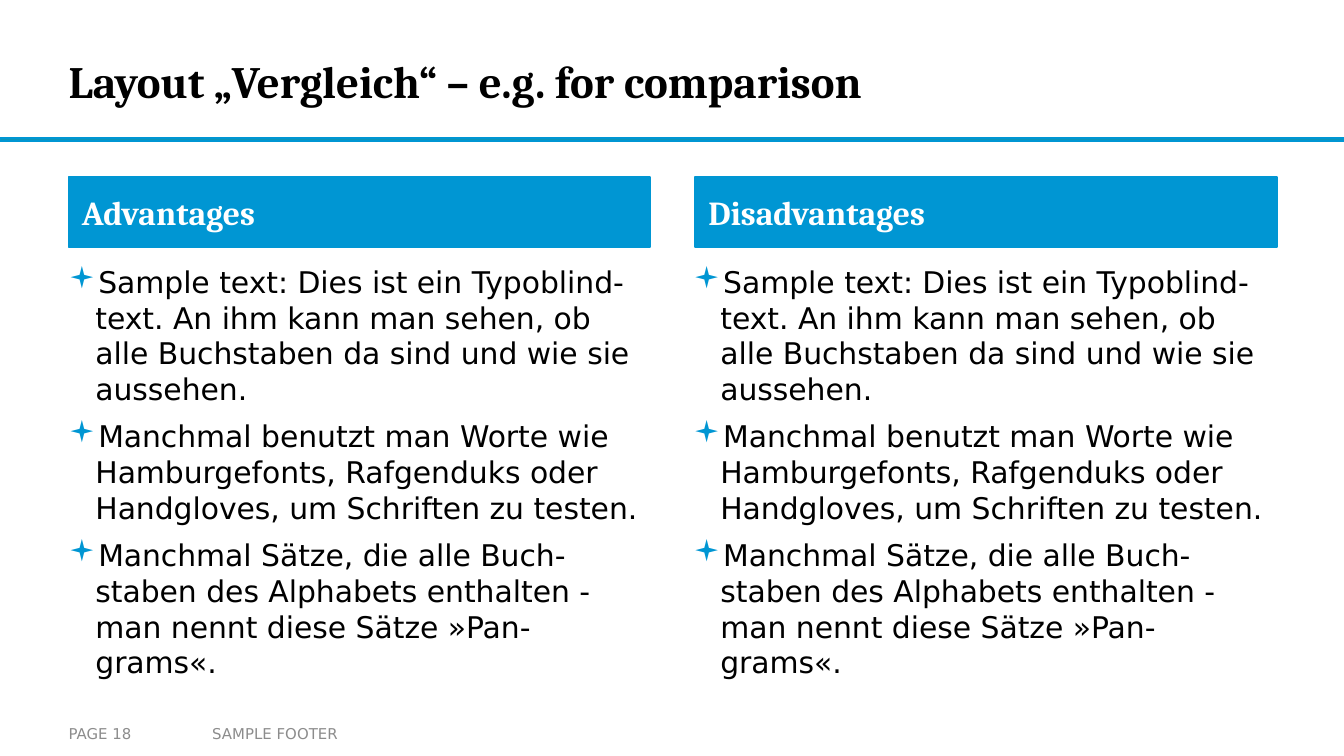
from lxml import etree
from pptx import Presentation
from pptx.dml.color import RGBColor
from pptx.enum.shapes import MSO_SHAPE
from pptx.enum.text import MSO_ANCHOR, MSO_AUTO_SIZE, PP_ALIGN
from pptx.oxml.ns import qn
from pptx.util import Inches, Pt

RECTANGLE = MSO_SHAPE.RECTANGLE
TOP, MIDDLE = MSO_ANCHOR.TOP, MSO_ANCHOR.MIDDLE
NO_AUTOFIT = MSO_AUTO_SIZE.NONE
LEFT = PP_ALIGN.LEFT

COLORS = {"accent": "0096D3", "rule": "0C94B7", "text": "000000",
          "inverse": "FFFFFF", "footer": "8C8C8C"}
HEADING_FONT, BODY_FONT, BULLET_FONT = "Cambria", "DejaVu Sans", "Wingdings"

MARGIN = 0.51
COLUMN_WIDTH = 4.33
HEADING_STEP, BODY_STEP = 4.66, 4.65
HEADING_TOP, HEADING_HEIGHT = 1.32, 0.52
BODY_TOP, BODY_HEIGHT = 1.91, 3.22
FOOTER_TOP, FOOTER_HEIGHT = 5.33, 0.25

HEADINGS = ["Advantages", "Disadvantages"]
POINTS = [
    "Sample text: Dies ist ein Typoblind-text. An ihm kann man sehen, ob alle "
    "Buchstaben da sind und wie sie aussehen.",
    "Manchmal benutzt man Worte wie Hamburgefonts, Rafgenduks oder "
    "Handgloves, um Schriften zu testen.",
    "Manchmal Sätze, die alle Buch-staben des Alphabets enthalten - man nennt "
    "diese Sätze »Pan-grams«.",
]


def place(shape, left, top, width, height):
    shape.left, shape.top = Inches(left), Inches(top)
    shape.width, shape.height = Inches(width), Inches(height)


def write(shape, lines, size, font=BODY_FONT, color="text", bold=False, anchor=MIDDLE,
          side=0, edge=0.05, margin=0, hanging=0, bullet=None, after=0):
    """Fill a shape with paragraphs; lengths in inches, sizes and gaps in points."""
    frame = shape.text_frame
    frame.word_wrap = True
    frame.auto_size = NO_AUTOFIT
    frame.vertical_anchor = anchor
    frame.margin_left = frame.margin_right = Inches(side)
    frame.margin_top = frame.margin_bottom = Inches(edge)
    for index, line in enumerate(lines):
        paragraph = frame.add_paragraph() if index else frame.paragraphs[0]
        paragraph.text = line
        properties = paragraph._p.get_or_add_pPr()
        properties.set("marL", str(Inches(margin)))
        properties.set("indent", str(Inches(-hanging)))
        if bullet:
            bullet_color = etree.SubElement(properties, qn("a:buClr"))
            etree.SubElement(bullet_color, qn("a:srgbClr"), val=COLORS["accent"])
            etree.SubElement(properties, qn("a:buFont"), typeface=BULLET_FONT)
            etree.SubElement(properties, qn("a:buChar"), char=bullet)
        paragraph.alignment = LEFT
        paragraph.space_before, paragraph.space_after = Pt(0), Pt(after)
        paragraph.font.name, paragraph.font.size = font, Pt(size)
        paragraph.font.bold = bold
        paragraph.font.color.rgb = RGBColor.from_string(COLORS[color])


presentation = Presentation()
presentation.slide_width = Inches(10)
presentation.slide_height = presentation.slide_width * 9 // 16
comparison_layout = presentation.slide_layouts.get_by_name("Comparison")
slide = presentation.slides.add_slide(comparison_layout)

# Title and the rule below it
title, *columns = slide.placeholders
place(title, MARGIN, 0.18, 7.48, 0.84)
write(title, ["Layout „Vergleich“ – e.g. for comparison"], 24,
      font=HEADING_FONT, bold=True, edge=0)

rule = slide.shapes.add_shape(RECTANGLE, 0, Inches(1.03),
                              presentation.slide_width, Inches(0.02))
rule.shadow.inherit = False
rule.fill.solid()
rule.fill.fore_color.rgb = RGBColor.from_string(COLORS["rule"])
rule.line.color.rgb = RGBColor.from_string(COLORS["accent"])
rule.line.width = Pt(1)

# Two columns, each a heading bar over a list
for column, text in enumerate(HEADINGS):
    heading, body = columns[2 * column:2 * column + 2]

    place(heading, MARGIN + column * HEADING_STEP, HEADING_TOP,
          COLUMN_WIDTH, HEADING_HEIGHT)
    heading.fill.solid()
    heading.fill.fore_color.rgb = RGBColor.from_string(COLORS["accent"])
    heading.line.color.rgb = RGBColor.from_string(COLORS["accent"])
    heading.line.width = Pt(1)
    write(heading, [text], 18, font=HEADING_FONT, color="inverse", bold=True,
          margin=0.1, after=6)

    place(body, MARGIN + column * BODY_STEP, BODY_TOP, COLUMN_WIDTH, BODY_HEIGHT)
    write(body, POINTS, 16, anchor=TOP, margin=0.2, hanging=0.2, bullet="▪", after=6)

# Footer
for text, left, width, side in [("PAGE 18", MARGIN, 0.98, 0),
                                ("SAMPLE FOOTER", 1.48, 3.52, 0.1)]:
    footer = slide.shapes.add_textbox(Inches(left), Inches(FOOTER_TOP),
                                      Inches(width), Inches(FOOTER_HEIGHT))
    write(footer, [text], 8, color="footer", side=side)

presentation.save("out.pptx")
